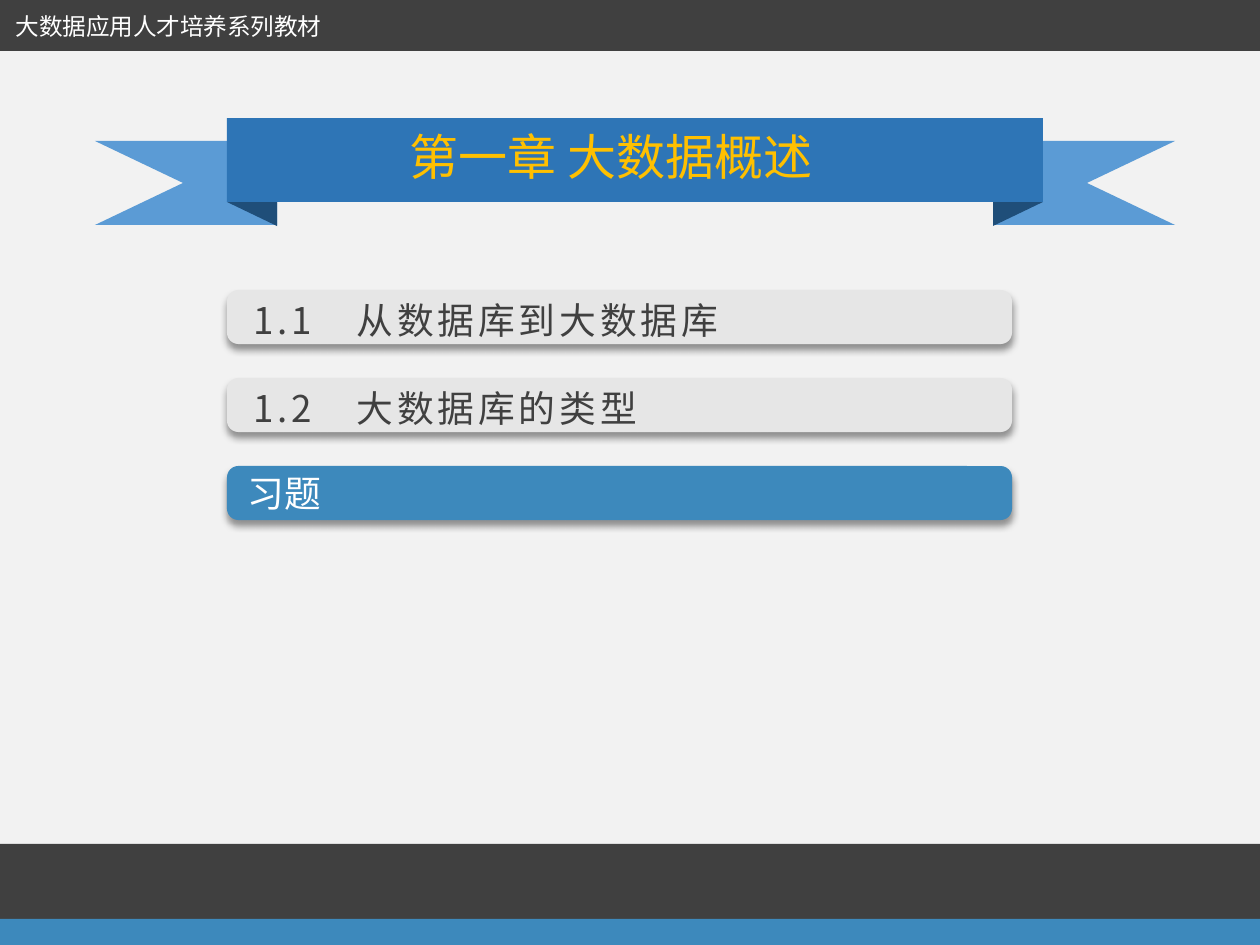
"""Build the chapter contents slide with a ribbon title and three section bars."""
from dataclasses import dataclass

from lxml import etree
from pptx import Presentation
from pptx.dml.color import RGBColor
from pptx.enum.shapes import MSO_SHAPE
from pptx.enum.text import MSO_ANCHOR, MSO_AUTO_SIZE, PP_ALIGN
from pptx.oxml.ns import qn
from pptx.util import Pt

RECTANGLE = MSO_SHAPE.RECTANGLE
ROUNDED = MSO_SHAPE.ROUNDED_RECTANGLE
TRIANGLE = MSO_SHAPE.RIGHT_TRIANGLE
MIDDLE = MSO_ANCHOR.MIDDLE
NO_AUTOFIT = MSO_AUTO_SIZE.NONE
CENTER, LEFT = PP_ALIGN.CENTER, PP_ALIGN.LEFT
EMU_PER_PX = 914400 / 126
TITLE_ONLY = 5
SLIDE_WIDTH, SLIDE_HEIGHT = 1260, 945
RIBBON_AXIS = 635
BAR_TOP, BAR_PITCH = 290, 88


@dataclass(frozen=True)
class Theme:
    font: str = "Noto Sans CJK SC"
    page: str = "F2F2F2"
    dark: str = "404040"
    accent: str = "3D89BC"
    bar: str = "E6E6E6"
    white: str = "FFFFFF"
    gold: str = "FFC000"
    ribbon: str = "2E75B6"
    tail: str = "5B9BD5"
    fold: str = "1F4E79"
    title_size: float = 28
    section_size: float = 21
    header_size: float = 13.5


@dataclass(frozen=True)
class Box:
    left: int
    top: int
    width: int
    height: int

    def emu(self) -> tuple[int, ...]:
        return tuple(px(v) for v in (self.left, self.top, self.width, self.height))


@dataclass(frozen=True)
class Section:
    label: str
    fill: str
    color: str
    inset: int
    drop: int
    spacing: int


THEME = Theme()
SECTIONS = (
    Section("1.1　从数据库到大数据库", THEME.bar, THEME.dark, 23, 5, 220),
    Section("1.2　大数据库的类型", THEME.bar, THEME.dark, 23, 5, 220),
    Section("习题", THEME.accent, THEME.white, 17, 0, 0),
)


def px(length: float) -> int:
    return round(length * EMU_PER_PX)


def paint(shape, color: str) -> None:
    shape.shadow.inherit = False
    shape.fill.solid()
    shape.fill.fore_color.rgb = RGBColor.from_string(color)
    shape.line.fill.background()


def add_block(slide, box: Box, color: str, kind=RECTANGLE):
    block = slide.shapes.add_shape(kind, *box.emu())
    paint(block, color)
    return block


def write(shape, text: str, size: float, color: str, align, spacing: int = 0) -> None:
    frame = shape.text_frame
    frame.text = text
    frame.word_wrap = False
    frame.auto_size = NO_AUTOFIT
    frame.vertical_anchor = MIDDLE
    frame.margin_top = frame.margin_bottom = 0
    paragraph = frame.paragraphs[0]
    paragraph.alignment = align
    font = paragraph.font
    font.size = Pt(size)
    font.color.rgb = RGBColor.from_string(color)
    font.name = THEME.font
    properties = paragraph._p.pPr.find(qn("a:defRPr"))
    if spacing:
        properties.set("spc", str(spacing))
    latin = properties.find(qn("a:latin"))
    latin.addnext(etree.Element(qn("a:ea"), typeface=THEME.font))


def add_soft_shadow(shape) -> None:
    effects = shape._element.spPr.find(qn("a:effectLst"))
    shadow = etree.SubElement(
        effects, qn("a:outerShdw"), blurRad=str(Pt(4)), dist=str(Pt(3)),
        dir="5400000", algn="t", rotWithShape="0",
    )
    tint = etree.SubElement(shadow, qn("a:srgbClr"), val="000000")
    etree.SubElement(tint, qn("a:alpha"), val="40000")


def add_tail(slide, side: int) -> None:
    offsets = ((540, 141), (358, 141), (358, 225), (540, 225), (452, 183))
    points = [(px(RIBBON_AXIS + side * x), px(y)) for x, y in offsets]
    builder = slide.shapes.build_freeform(*points[0])
    builder.add_line_segments(points[1:], close=True)
    paint(builder.convert_to_shape(), THEME.tail)


def add_ribbon(slide) -> None:
    for side in (-1, 1):
        add_tail(slide, side)
    left_fold = add_block(slide, Box(227, 202, 50, 24), THEME.fold, TRIANGLE)
    left_fold.rotation = 180
    right_fold = add_block(slide, Box(1006, 189, 24, 50), THEME.fold, TRIANGLE)
    right_fold.rotation = 90
    add_block(slide, Box(227, 118, 816, 84), THEME.ribbon)


def add_title(slide) -> None:
    title = slide.shapes.title
    title.left, title.top, title.width, title.height = Box(393, 120, 436, 72).emu()
    write(title, "第一章 大数据概述", THEME.title_size, THEME.gold, CENTER)
    title._element.getparent().append(title._element)


def add_section(slide, section: Section, index: int) -> None:
    box = Box(227, BAR_TOP + index * BAR_PITCH, 785, 54)
    bar = add_block(slide, box, section.fill, ROUNDED)
    bar.adjustments[0] = 0.21
    add_soft_shadow(bar)
    write(bar, section.label, THEME.section_size, section.color, LEFT, section.spacing)
    bar.text_frame.margin_left = px(section.inset)
    bar.text_frame.margin_top = px(section.drop)


def add_bands(slide) -> None:
    add_block(slide, Box(0, 0, SLIDE_WIDTH, 51), THEME.dark)
    add_block(slide, Box(0, 844, SLIDE_WIDTH, 75), THEME.dark)
    add_block(slide, Box(0, 919, SLIDE_WIDTH, 26), THEME.accent)
    series = slide.shapes.add_textbox(*Box(1, 5, 335, 42).emu())
    write(series, "大数据应用人才培养系列教材", THEME.header_size, THEME.white, CENTER)


def main() -> None:
    deck = Presentation()
    deck.slide_width, deck.slide_height = px(SLIDE_WIDTH), px(SLIDE_HEIGHT)
    slide = deck.slides.add_slide(deck.slide_layouts[TITLE_ONLY])
    slide.background.fill.solid()
    slide.background.fill.fore_color.rgb = RGBColor.from_string(THEME.page)
    add_ribbon(slide)
    add_title(slide)
    for index, section in enumerate(SECTIONS):
        add_section(slide, section, index)
    add_bands(slide)
    deck.save("out.pptx")


if __name__ == "__main__":
    main()
